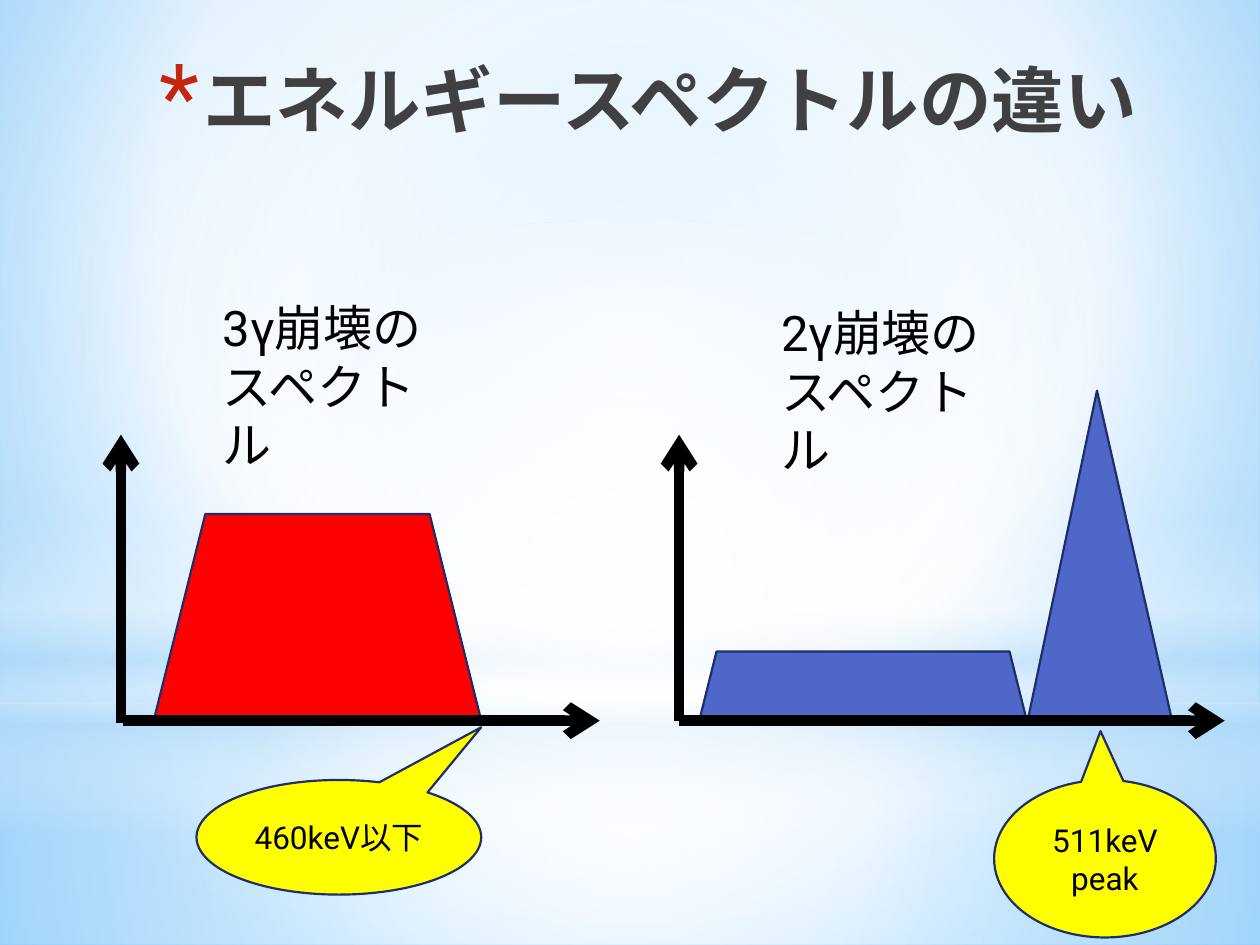
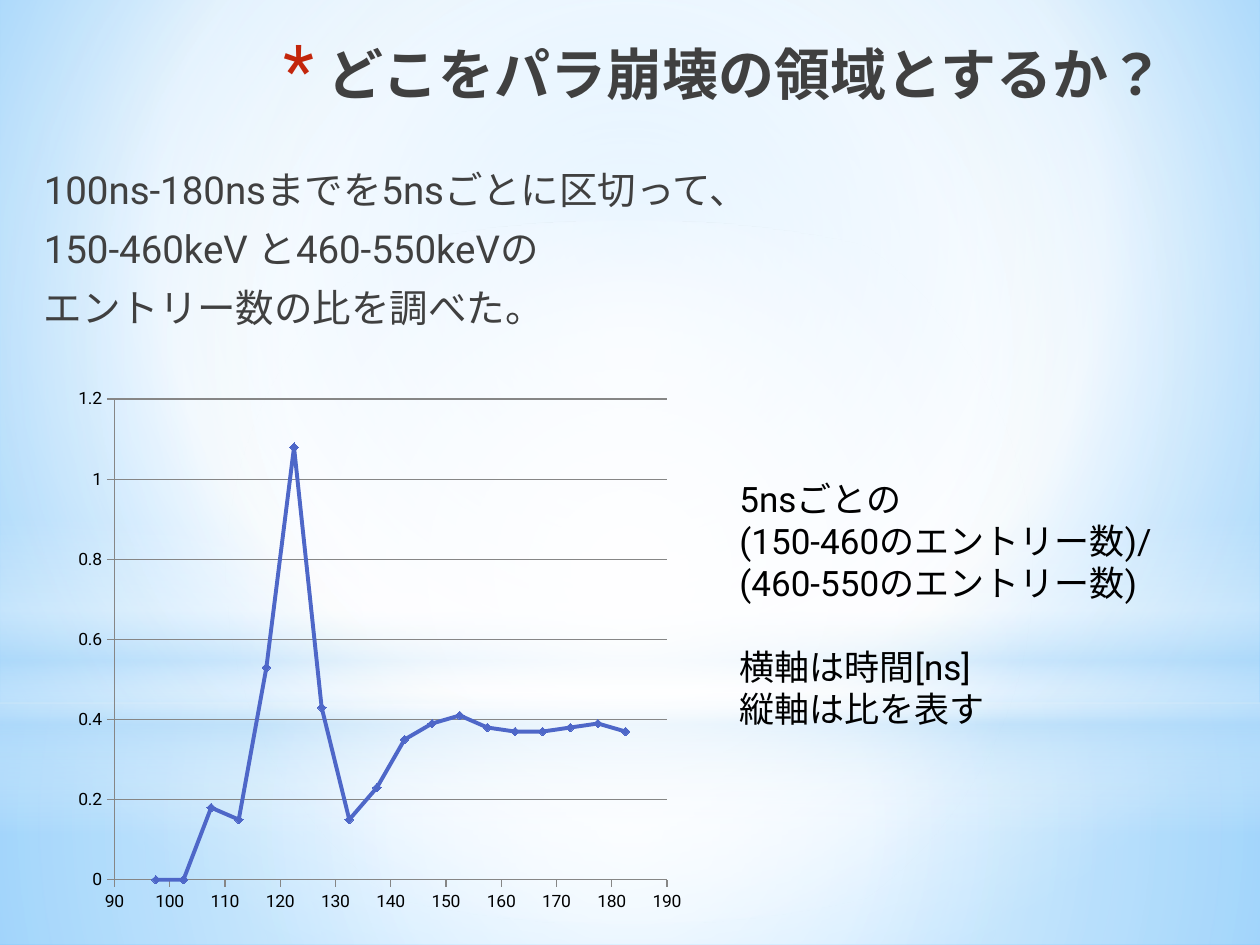
from dataclasses import dataclass

from lxml.etree import SubElement
from pptx import Presentation
from pptx.chart.data import XyChartData
from pptx.dml.color import RGBColor
from pptx.enum.chart import XL_CHART_TYPE as Kind
from pptx.enum.chart import XL_MARKER_STYLE as Mark
from pptx.enum.chart import XL_TICK_MARK as Tick
from pptx.enum.lang import MSO_LANGUAGE_ID as Lang
from pptx.enum.shapes import MSO_CONNECTOR as Link
from pptx.enum.shapes import MSO_SHAPE as Form
from pptx.enum.text import MSO_ANCHOR as Anchor
from pptx.enum.text import MSO_AUTO_SIZE as Fit
from pptx.enum.text import PP_ALIGN as Align
from pptx.oxml.ns import qn
from pptx.util import Inches, Pt

FONT = "Roboto"
BLACK = RGBColor(0x00, 0x00, 0x00)
GREY = RGBColor(0x40, 0x40, 0x40)
GRID = RGBColor(0x86, 0x86, 0x86)
RED = RGBColor(0xFF, 0x00, 0x00)
BLUE = RGBColor(0x4E, 0x67, 0xC8)
NAVY = RGBColor(0x1F, 0x2E, 0x69)
YELLOW = RGBColor(0xFF, 0xFF, 0x00)
STAR = RGBColor(0xC3, 0x26, 0x0C)
WHITE = RGBColor(0xFF, 0xFF, 0xFF)
SKY = RGBColor(0xB4, 0xDC, 0xFA)
PALE = RGBColor(0x9E, 0xD5, 0xFF)
DEEP = RGBColor(0x5B, 0xB9, 0xFF)

Box = tuple[float, float, float, float]
MID = (50, 50, 50, 50)


@dataclass
class Glow:
    """Stops are (position, colour, opacity); no focus means top to bottom."""
    stops: list[tuple[int, RGBColor, int]]
    focus: tuple[int, int, int, int] | None = MID


@dataclass
class Band:
    form: Form
    box: Box
    glow: Glow


@dataclass
class Figure:
    form: Form
    box: Box
    color: RGBColor
    adjust: tuple[float, ...] = ()
    text: str = ""


@dataclass
class Axis:
    start: tuple[float, float]
    end: tuple[float, float]


@dataclass
class Note:
    box: Box
    lines: list[str]
    size: float
    color: RGBColor = BLACK


BACK = Glow([(0, PALE, 100), (60, WHITE, 100), (100, DEEP, 100)], (20, 10, 20, 60))
BANDS = [
    Band(Form.RECTANGLE, (0, 5.58, 10, 1.92),
         Glow([(0, WHITE, 91), (37, WHITE, 76), (100, SKY, 79)])),
    Band(Form.RECTANGLE, (0, 0, 10, 5.58),
         Glow([(0, WHITE, 89), (48, WHITE, 62), (100, SKY, 79)])),
    Band(Form.RECTANGLE, (0, 4.12, 10, 2.5),
         Glow([(0, WHITE, 0), (29, WHITE, 30), (45, SKY, 40),
               (55, WHITE, 26), (65, SKY, 60), (100, WHITE, 0)], None)),
    Band(Form.OVAL, (0, 1.75, 10, 5.58), Glow([(0, WHITE, 100), (56, WHITE, 0)])),
]

FIGURES = [
    Figure(Form.TRAPEZOID, (1.22, 4.08, 2.6, 1.64), RED),
    Figure(Form.ISOSCELES_TRIANGLE, (8.15, 3.1, 1.16, 2.65), BLUE, (0.48,)),
    Figure(Form.TRAPEZOID, (5.55, 5.17, 2.6, 0.55), BLUE),
]
AXES = [
    Axis((0.98, 5.72), (4.76, 5.72)),
    Axis((5.39, 5.72), (9.72, 5.72)),
    Axis((5.39, 5.72), (5.39, 3.45)),
    Axis((0.96, 5.74), (0.96, 3.45)),
]
CALLOUTS = [
    Figure(Form.OVAL_CALLOUT, (1.56, 6.19, 2.26, 0.91), YELLOW, (0.5, -0.96), "460keV以下"),
    Figure(Form.OVAL_CALLOUT, (7.89, 6.19, 1.76, 1.25), YELLOW, (-0.02, -0.81), "511keV peak"),
]
LABELS = [
    Note((1.67, 2.31, 2.05, 1.04), ["3γ崩壊のスペクトル"], 28),
    Note((6.1, 2.35, 2.05, 1.04), ["2γ崩壊のスペクトル"], 28),
]
METHOD = Note((0.2, 1.27, 6.1, 1.58),
              ["100ns-180nsまでを5nsごとに区切って、", "150-460keV と460-550keVの",
               "エントリー数の比を調べた。"], 22, GREY)
LEGEND = Note((5.77, 3.74, 4.02, 2.12),
              ["5nsごとの", "(150-460のエントリー数)/", "(460-550のエントリー数)",
               "横軸は時間[ns]", "縦軸は比を表す"], 20)
RATIOS = [0, 0, 0.18, 0.15, 0.53, 1.08, 0.43, 0.15, 0.23,
          0.35, 0.39, 0.41, 0.38, 0.37, 0.37, 0.38, 0.39, 0.37]
FIRST, STEP = 97.5, 5


def place(box: Box) -> list[Inches]:
    return [Inches(n) for n in box]


def tag(node, name: str, **attrs):
    return SubElement(node, qn(name), {k: str(v) for k, v in attrs.items()})


def shade(fill, root, glow: Glow) -> None:
    """Swap the plain fill below root for a gradient."""
    fill.background()
    old = root.find(".//" + qn("a:noFill"))
    home = old.getparent()
    grad = tag(home, "a:gradFill", rotWithShape=1)
    stops = tag(grad, "a:gsLst")
    for pos, color, alpha in glow.stops:
        tone = tag(tag(stops, "a:gs", pos=pos * 1000), "a:srgbClr", val=color)
        if alpha < 100:
            tag(tone, "a:alpha", val=alpha * 1000)
    if glow.focus:
        sides = {k: n * 1000 for k, n in zip("ltrb", glow.focus)}
        tag(tag(grad, "a:path", path="circle"), "a:fillToRect", **sides)
    else:
        tag(grad, "a:lin", ang=90 * 60000, scaled=0)
    home.replace(old, grad)


def dress(master, slide) -> None:
    """Give the master its background; bands are drawn on a slide, then moved."""
    shade(master.background.fill, master.element, BACK)
    tree = master.shapes.element
    for i, band in enumerate(BANDS):
        shape = slide.shapes.add_shape(band.form, *place(band.box))
        shape.shadow.inherit = False
        shade(shape.fill, shape.element, band.glow)
        shape.line.fill.background()
        shape.element.nvSpPr.cNvPr.set("id", str(100 + i))
        tree.insert(2 + i, shape.element)


def write(para, text: str, size: float, color: RGBColor, bold: bool = False) -> None:
    run = para.add_run()
    run.text = text
    font = run.font
    font.name, font.size, font.bold = FONT, Pt(size), bold
    font.color.rgb = color
    font.language_id = Lang.JAPANESE


def indent(para, left: float, first: float):
    props = para._p.get_or_add_pPr()
    props.set("marL", str(Inches(left)))
    props.set("indent", str(Inches(first)))
    return props


def head(slide, text: str, box: Box, size: float) -> None:
    title = slide.shapes.title
    title.left, title.top, title.width, title.height = place(box)
    frame = title.text_frame
    frame.auto_size, frame.vertical_anchor = Fit.NONE, Anchor.TOP
    para = frame.paragraphs[0]
    para.alignment = Align.RIGHT
    props = indent(para, 0.35, -0.35)
    tag(tag(props, "a:buClr"), "a:srgbClr", val=STAR)
    tag(props, "a:buSzPct", val=128000)
    tag(props, "a:buFont", typeface=FONT)
    tag(props, "a:buChar", char="*")
    write(para, text, size, GREY, True)


def draw(slide, fig: Figure) -> None:
    shape = slide.shapes.add_shape(fig.form, *place(fig.box))
    shape.shadow.inherit = False
    shape.fill.solid()
    shape.fill.fore_color.rgb = fig.color
    shape.line.color.rgb = NAVY
    shape.line.width = Pt(1.25)
    for i, value in enumerate(fig.adjust):
        shape.adjustments[i] = value
    if fig.text:
        frame = shape.text_frame
        frame.word_wrap, frame.vertical_anchor = True, Anchor.MIDDLE
        para = frame.paragraphs[0]
        para.alignment = Align.CENTER
        write(para, fig.text, 18, BLACK)


def arrow(slide, axis: Axis) -> None:
    line = slide.shapes.add_connector(Link.STRAIGHT, *place(axis.start + axis.end))
    line.line.color.rgb = BLACK
    line.line.width = Pt(6)
    tag(line.line._get_or_add_ln(), "a:tailEnd", type="arrow")
    tag(line.element.spPr, "a:effectLst")


def jot(slide, note: Note) -> list:
    frame = slide.shapes.add_textbox(*place(note.box)).text_frame
    frame.word_wrap = True
    for i, text in enumerate(note.lines):
        para = frame.add_paragraph() if i else frame.paragraphs[0]
        write(para, text, note.size, note.color)
    return list(frame.paragraphs)


def scale(axis, low: float, high: float, step: float, grid: bool) -> None:
    axis.minimum_scale, axis.maximum_scale, axis.major_unit = low, high, step
    axis.major_tick_mark, axis.minor_tick_mark = Tick.OUTSIDE, Tick.NONE
    axis.has_major_gridlines = grid
    axis.tick_labels.number_format = "General"
    axis.tick_labels.number_format_is_linked = False
    lines = [axis.format.line] + ([axis.major_gridlines.format.line] if grid else [])
    for line in lines:
        line.color.rgb = GRID
        line.width = Pt(0.75)


def plot(slide) -> None:
    data = XyChartData()
    series = data.add_series("Series 1")
    for i, ratio in enumerate(RATIOS):
        series.add_data_point(FIRST + STEP * i, ratio)
    box = place((0.29, 2.85, 6, 4.38))
    chart = slide.shapes.add_chart(Kind.XY_SCATTER_SMOOTH, *box, data).chart
    chart.has_legend = chart.has_title = False
    chart.font.name, chart.font.size = FONT, Pt(10)
    chart.font.color.rgb = BLACK
    scale(chart.category_axis, 90, 190, 10, False)
    scale(chart.value_axis, 0, 1.2, 0.2, True)

    graph = chart.plots[0]
    graph.vary_by_categories = False
    curve = graph.series[0]
    curve.smooth = True
    curve.format.line.color.rgb = BLUE
    curve.format.line.width = Pt(2.25)
    curve.marker.style, curve.marker.size = Mark.DIAMOND, 5
    look = curve.marker.format
    look.fill.solid()
    look.fill.fore_color.rgb = look.line.color.rgb = BLUE

    # Fixed inner plot area
    area = chart.element.find(".//" + qn("c:plotArea"))
    for old in area.findall(qn("c:layout")):
        area.remove(old)
    layout = tag(area, "c:layout")
    area.insert(0, layout)
    manual = tag(layout, "c:manualLayout")
    tag(manual, "c:layoutTarget", val="inner")
    for side in "xy":
        tag(manual, f"c:{side}Mode", val="edge")
    for side, part in zip("xywh", (0.103, 0.075, 0.731, 0.897)):
        tag(manual, f"c:{side}", val=part)


def spectra(slide) -> None:
    head(slide, "エネルギースペクトルの違い", (0.58, 0.39, 8.54, 1.25), 41.4)
    for fig in FIGURES:
        draw(slide, fig)
    for axis in AXES:
        arrow(slide, axis)
    for fig in CALLOUTS:
        draw(slide, fig)
    for note in LABELS:
        jot(slide, note)


def region(slide) -> None:
    head(slide, "どこをパラ崩壊の領域とするか？", (0.85, 0.26, 8.5, 0.97), 32)
    for para in jot(slide, METHOD):
        indent(para, 0.25, -0.2)
        para.space_before, para.space_after = Pt(4.4), Pt(3)
    plot(slide)
    jot(slide, LEGEND)[3].space_before = Pt(24)


def main() -> None:
    deck = Presentation()
    deck.slide_width, deck.slide_height = Inches(10), Inches(7.5)
    first, second = [deck.slides.add_slide(deck.slide_layouts[5]) for _ in range(2)]
    dress(deck.slide_master, first)
    spectra(first)
    region(second)
    deck.save("out.pptx")


if __name__ == "__main__":
    main()
